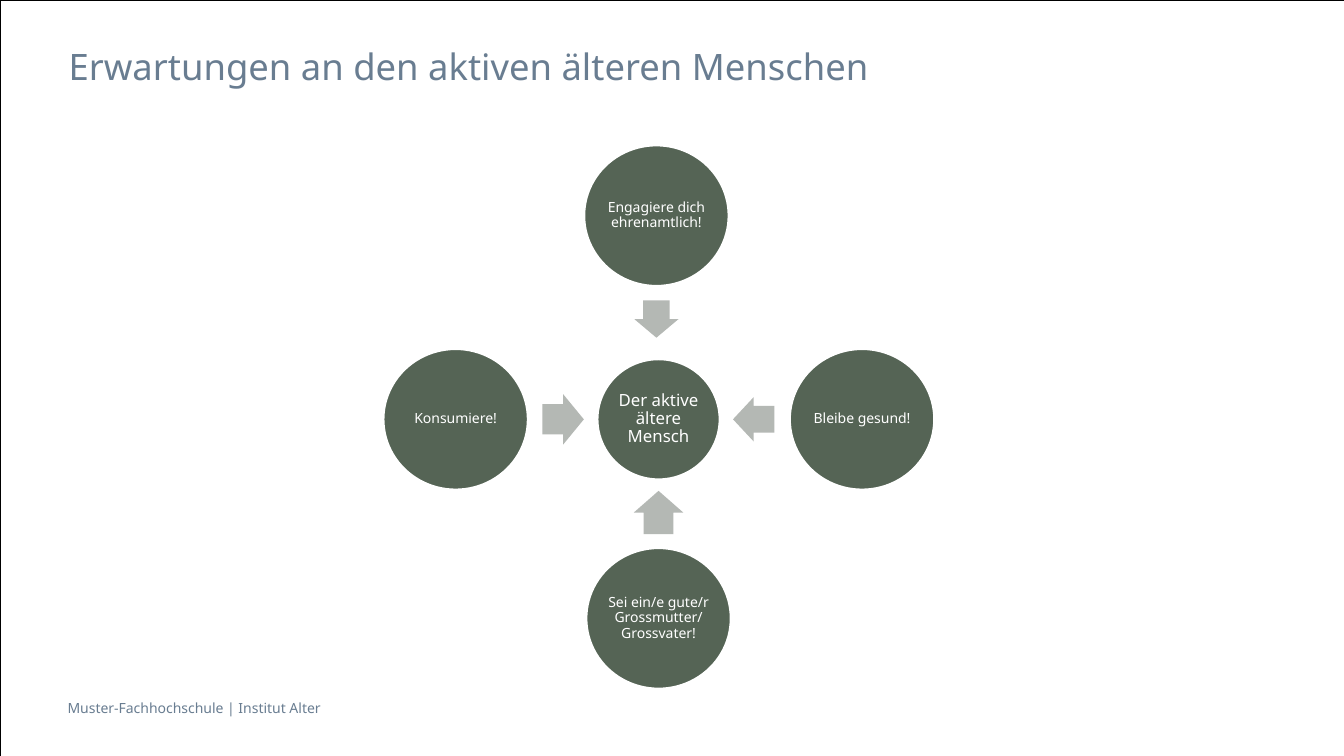
"""Build the slide on what is expected of active older people."""
from pptx import Presentation
from pptx import util as u
from pptx.dml.color import RGBColor
from pptx.enum import shapes, text

SLATE = RGBColor(0x69, 0x7D, 0x91)
GREEN = RGBColor(0x55, 0x64, 0x55)
GREY = RGBColor(0xB4, 0xB8, 0xB4)
WHITE = RGBColor(0xFF, 0xFF, 0xFF)
BLACK = RGBColor(0, 0, 0)
SHAPE = shapes.MSO_SHAPE

deck = Presentation()
deck.slide_width, deck.slide_height = u.Inches(13.33), u.Inches(7.5)
COL, ROW = deck.slide_width / 100, deck.slide_height / 100
slide = deck.slides.add_slide(deck.slide_layouts[5])


def write(holder, words, size, colour, align, anchor, inset):
    """Fill a shape with one formatted paragraph."""
    frame = holder.text_frame
    frame.text = words
    layout = {"word_wrap": True, "auto_size": text.MSO_AUTO_SIZE.NONE,
              "vertical_anchor": anchor, "margin_left": 0, "margin_right": 0,
              "margin_top": inset, "margin_bottom": inset}
    for key, value in layout.items():
        setattr(frame, key, value)
    paragraph = frame.paragraphs[0]
    paragraph.alignment = align
    font = paragraph.runs[0].font
    for key, value in {"name": "Noto Sans", "size": u.Pt(size)}.items():
        setattr(font, key, value)
    font.color.rgb = colour
    return paragraph


def add_centred(kind, x, y, width, height, colour):
    """Add a filled shape around a grid point."""
    shape = slide.shapes.add_shape(
        kind, round((x - width / 2) * COL), round((y - height / 2) * ROW),
        round(width * COL), round(height * ROW))
    shape.shadow.inherit = False
    shape.fill.solid()
    shape.fill.fore_color.rgb = colour
    shape.line.fill.background()
    return shape


page_frame = add_centred(SHAPE.RECTANGLE, 50, 50, 100, 100, WHITE)
page_frame.fill.background()
page_frame.line.color.rgb = BLACK
page_frame.line.width = u.Pt(0.5)

title = slide.shapes.title
institute = slide.shapes.add_textbox(0, 0, 0, 0)
labels = [
    (title, "Erwartungen an den aktiven älteren Menschen", 26, (5.1, 5.2, 88.6, 7.87)),
    (institute, "Muster-Fachhochschule | Institut Alter", 10, (5.03, 91.87, 73.1, 3.6)),
]
for label, words, size, (left, top, width, height) in labels:
    place = {"left": left * COL, "top": top * ROW, "width": width * COL, "height": height * ROW}
    for key, value in place.items():
        setattr(label, key, round(value))
    write(label, words, size, SLATE, text.PP_ALIGN.LEFT, text.MSO_ANCHOR.TOP, u.Inches(0.05))

MID_X, MID_Y = 49, 55.47
people = [
    ("Der aktive ältere Mensch", 12, MID_X, MID_Y, 9.15, 16),
    ("Engagiere dich ehrenamtlich!", 10, 48.84, 28.53, 10.8, 18.7),
    ("Bleibe gesund!", 10, 64.14, MID_Y, 10.8, 18.7),
    ("Sei ein/e gute/r Grossmutter/ Grossvater!", 10, MID_X, 81.8, 10.8, 18.7),
    ("Konsumiere!", 10, 33.9, MID_Y, 10.8, 18.7),
]
for words, size, x, y, width, height in people:
    circle = add_centred(SHAPE.OVAL, x, y, width, height, GREEN)
    circle.line.color.rgb = WHITE
    circle.line.width = u.Pt(2)
    paragraph = write(circle, words, size, WHITE, text.PP_ALIGN.CENTER, text.MSO_ANCHOR.MIDDLE, 0)
    paragraph.line_spacing = 0.9

arrows = [
    (SHAPE.DOWN_ARROW, 48.84, 42.2, 3.3, 4.93),
    (SHAPE.LEFT_ARROW, 56.08, MID_Y, 3.08, 5.87),
    (SHAPE.UP_ARROW, MID_X, 67.8, 3.68, 5.73),
    (SHAPE.RIGHT_ARROW, 41.9, MID_Y, 3.08, 6.67),
]
for kind, x, y, width, height in arrows:
    arrow = add_centred(kind, x, y, width, height, GREY)
    arrow.adjustments[0] = 0.6
    arrow.adjustments[1] = 0.5

deck.save("out.pptx")
